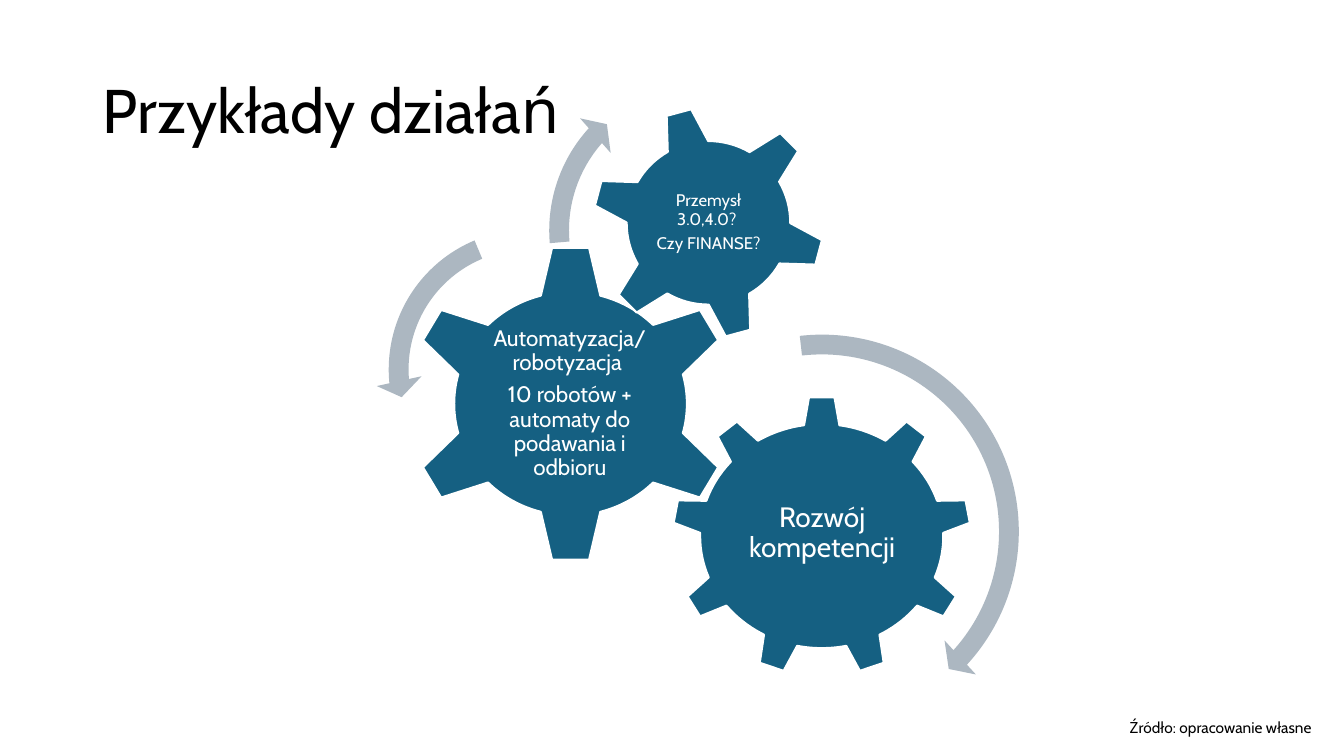
from pptx import Presentation
from pptx.dml.color import RGBColor as RGB
from pptx.enum.shapes import MSO_SHAPE as Kind
from pptx.enum.text import MSO_ANCHOR as Anchor, PP_ALIGN as Align
from pptx.util import Cm, Pt

colors = {"gear": "156082", "arrow": "ACB7C1", "white": "FFFFFF", "black": "000000"}


def add_shape(kind, box, color):
    shape = slide.shapes.add_shape(kind, *[Cm(v) for v in box])
    shape.shadow.inherit = False
    shape.fill.solid()
    shape.fill.fore_color.rgb = RGB.from_string(colors[color])
    return shape


def add_text(box, lines, size, color, inset=None):
    frame = slide.shapes.add_textbox(*[Cm(v) for v in box]).text_frame
    frame.word_wrap = True
    if inset:
        frame.margin_left = frame.margin_right = Cm(inset)
        frame.margin_top = frame.margin_bottom = Cm(inset)
    for i, line in enumerate(lines):
        para = frame.paragraphs[0] if i == 0 else frame.add_paragraph()
        run = para.add_run()
        run.text = line
        run.font.name = "Cabin"
        run.font.size = Pt(size)
        run.font.color.rgb = RGB.from_string(colors[color])
    return frame


deck = Presentation()
deck.slide_width, deck.slide_height = Cm(33.87), Cm(19.05)
slide = deck.slides.add_slide(deck.slide_layouts[6])

title = add_text((2.34, 1.02, 29.21, 3.68), ["Przykłady działań"], 44, "black")
title.vertical_anchor = Anchor.MIDDLE
title.paragraphs[0].line_spacing = 0.9

add_text((28.22, 17.96, 5.64, 0.74), ["Źródło: opracowanie własne"], 11, "black")

gears = [
    (Kind.GEAR_9, (16.94, 9.98, 7.54, 7.06), 0, (18.42, 11.63, 4.6, 3.63),
     ["Rozwój kompetencji"], 20, 0.07),
    (Kind.GEAR_6, (10.24, 6.15, 8.28, 8.05), 0, (12.29, 8.18, 4.14, 3.99),
     ["Automatyzacja/ robotyzacja ", "10 robotów + automaty do podawania i odbioru"], 16, 0.05),
    (Kind.GEAR_6, (14.91, 2.67, 5.89, 5.89), 345, (16.21, 3.96, 3.3, 3.3),
     ["Przemysł 3.0,4.0? ", "Czy FINANSE?"], 12, 0.05),
]
for kind, box, turn, place, lines, size, inset in gears:
    gear = add_shape(kind, box, "gear")
    gear.rotation = turn
    gear.line.color.rgb = RGB.from_string(colors["white"])
    gear.line.width = Pt(1.5)
    label = add_text(place, lines, size, "white", inset)
    label.vertical_anchor = Anchor.MIDDLE
    for para in label.paragraphs:
        para.alignment = Align.CENTER
        para.line_spacing = 0.9
        para.space_after = Pt(0.35 * size)

arrows = [
    (Kind.CIRCULAR_ARROW, 15.42, 8.1, 10.59, (0.047, 2.99, 25.393, 158.123, 0.055)),
    (Kind.LEFT_CIRCULAR_ARROW, 9.47, 5.46, 7.7, (0.065, 4.3, 104.891, 148.378, 0.075)),
    (Kind.CIRCULAR_ARROW, 13.51, 1.65, 8.31, (0.06, 3.941, 133.138, 105.082, 0.07)),
]
for kind, left, top, side, bends in arrows:
    arrow = add_shape(kind, (left, top, side, side), "arrow")
    arrow.line.fill.background()
    for i, bend in enumerate(bends):
        arrow.adjustments[i] = bend

deck.save("out.pptx")
